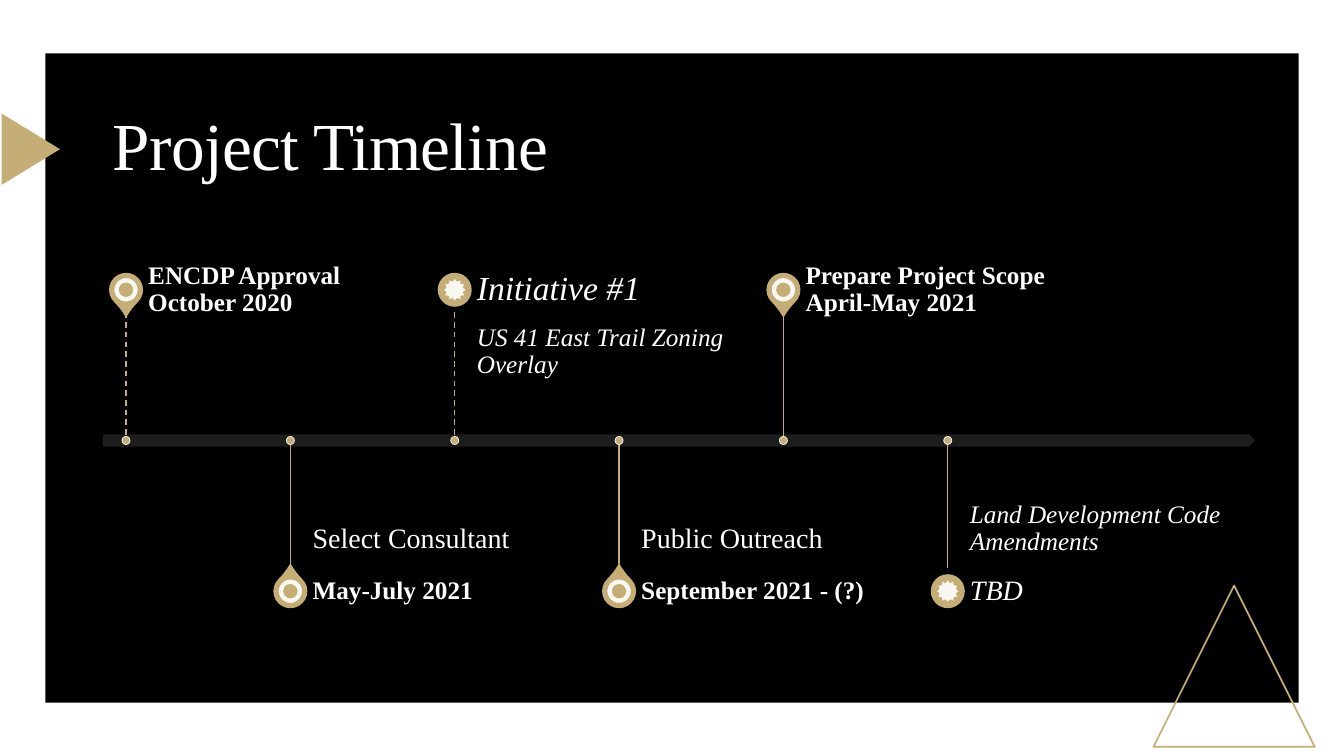
"""Build the project timeline slide."""
from dataclasses import dataclass

from lxml import etree
from pptx import Presentation, util as u
from pptx.dml.color import RGBColor
from pptx.enum import dml, shapes, text
from pptx.oxml.ns import qn

TITLE = "Project Timeline"
EVENTS = [
    {"label": "ENCDP Approval\vOctober 2020", "style": "bold", "pin": True, "dashed": True},
    {"label": "May-July 2021", "style": "bold", "pin": True,
     "detail": "Select Consultant", "detail_style": "heading"},
    {"label": "Initiative #1", "style": "initiative", "dashed": True,
     "detail": "US 41 East Trail Zoning Overlay", "detail_style": "italic"},
    {"label": "September 2021 - (?)", "style": "bold", "pin": True,
     "detail": "Public Outreach", "detail_style": "heading"},
    {"label": "Prepare Project Scope\vApril-May 2021", "style": "bold", "pin": True},
    {"label": "TBD", "style": "pending",
     "detail": "Land Development Code Amendments", "detail_style": "italic"},
]


@dataclass(frozen=True)
class Theme:
    """Colours, font and type styles as (size, bold, italic)."""
    panel: str = "000000"
    gold: str = "C4AE75"
    white: str = "FFFFFF"
    axis: str = "212121"
    font: str = "Times New Roman"
    title: tuple = (48, False, False)
    bold: tuple = (18, True, False)
    italic: tuple = (18, False, True)
    heading: tuple = (20, False, False)
    pending: tuple = (20, False, True)
    initiative: tuple = (24, False, True)


THEME = Theme()
KIND = shapes.MSO_SHAPE
ANCHOR = text.MSO_ANCHOR
FIRST_X, STEP, AXIS_Y = 125, 163, 437
STEM, LABEL_H = 127, 45
LABEL_GAP, LABEL_W = 22, 271
HEAD, RING, DOT = 32, 25, 8


def px(length):
    return u.Emu(length * 9144)


def draw(kind, left, top, width, height, fill=None, line=None, weight=1.25, alpha=None):
    shape = slide.shapes.add_shape(kind, px(left), px(top), px(width), px(height))
    shape.shadow.inherit = False
    if fill:
        shape.fill.solid()
        shape.fill.fore_color.rgb = RGBColor.from_string(fill)
        if alpha:
            color = shape.fill._xPr.find(qn("a:solidFill"))[0]
            etree.SubElement(color, qn("a:alpha"), val=str(alpha * 1000))
    else:
        shape.fill.background()
    if line:
        shape.line.color.rgb = RGBColor.from_string(line)
        shape.line.width = u.Pt(weight)
    else:
        shape.line.fill.background()
    return shape


def draw_centred(kind, x, y, size, **look):
    return draw(kind, x - size / 2, y - size / 2, size, size, **look)


def write(frame, words, style, anchor):
    frame.text = words
    frame.word_wrap = True
    frame.auto_size = text.MSO_AUTO_SIZE.NONE
    frame.vertical_anchor = anchor
    paragraph = frame.paragraphs[0]
    paragraph.alignment = text.PP_ALIGN.LEFT
    paragraph.line_spacing = 0.9
    size, bold, italic = getattr(THEME, style)
    for run in paragraph.runs:
        run.font.name = THEME.font
        run.font.size = u.Pt(size)
        run.font.bold, run.font.italic = bold, italic
        run.font.color.rgb = RGBColor.from_string(THEME.white)


def add_text(words, style, left, top, height, anchor, inset_top=0, inset_bottom=0):
    box = slide.shapes.add_textbox(px(left), px(top), px(LABEL_W), px(height))
    frame = box.text_frame
    write(frame, words, style, anchor)
    frame.margin_left, frame.margin_right = 0, px(12)
    frame.margin_top, frame.margin_bottom = px(inset_top), px(inset_bottom)


def add_stem(x, end_y, dashed):
    stem = slide.shapes.add_connector(
        shapes.MSO_CONNECTOR.STRAIGHT, px(x), px(end_y), px(x), px(AXIS_Y))
    stem.line.color.rgb = RGBColor.from_string(THEME.gold)
    stem.line.width = u.Pt(1)
    if dashed:
        stem.line.dash_style = dml.MSO_LINE.DASH
    etree.SubElement(stem._element.spPr, qn("a:effectLst"))


def add_event(index, event):
    above = index % 2 == 0
    side = -1 if above else 1
    x = FIRST_X + index * STEP
    marker_y = AXIS_Y + side * (STEM + LABEL_H / 2)
    pin = event.get("pin")
    head = draw_centred(KIND.TEAR if pin else KIND.OVAL, x, marker_y, HEAD,
                        fill=THEME.gold, line=THEME.gold)
    if pin:
        head.adjustments[0] = 1.15
        head.rotation = 135 if above else 315
    draw_centred(KIND.DONUT if pin else KIND.STAR_12_POINT, x, marker_y, RING,
                 fill=THEME.white, line=THEME.gold, alpha=90)
    text_x = x + LABEL_GAP
    if "detail" in event:
        style = event["detail_style"]
        near = getattr(THEME, style)[0] * 7 // 10
        far = near + 7
        if above:
            add_text(event["detail"], style, text_x, AXIS_Y - STEM, STEM, ANCHOR.TOP, near, far)
        else:
            add_text(event["detail"], style, text_x, AXIS_Y, STEM, ANCHOR.BOTTOM, far, near)
    add_text(event["label"], event["style"], text_x, marker_y - LABEL_H / 2,
             LABEL_H, ANCHOR.MIDDLE)
    add_stem(x, AXIS_Y + side * STEM, event.get("dashed"))
    draw_centred(KIND.OVAL, x, AXIS_Y, DOT, fill=THEME.gold, line=THEME.white, weight=0.5)


deck = Presentation()
deck.slide_width, deck.slide_height = px(1333), px(750)
slide = deck.slides.add_slide(deck.slide_layouts[5])

draw(KIND.RECTANGLE, 45, 53, 1243, 644, fill=THEME.panel)
draw(KIND.ISOSCELES_TRIANGLE, 1144, 581, 160, 160, line=THEME.gold)
draw(KIND.ISOSCELES_TRIANGLE, -5, 119, 71, 58, fill=THEME.gold).rotation = 90
draw(KIND.PENTAGON, 102, AXIS_Y - 6, 1143, 12, fill=THEME.axis, alpha=90)
for number, milestone in enumerate(EVENTS):
    add_event(number, milestone)

title = slide.shapes.title
title.left, title.top, title.width, title.height = px(102), px(98), px(1143), px(100)
write(title.text_frame, TITLE, "title", ANCHOR.MIDDLE)
title.text_frame.paragraphs[0].runs[0].font._element.set("spc", "-50")
slide.shapes._spTree.append(title._element)

deck.save("out.pptx")
